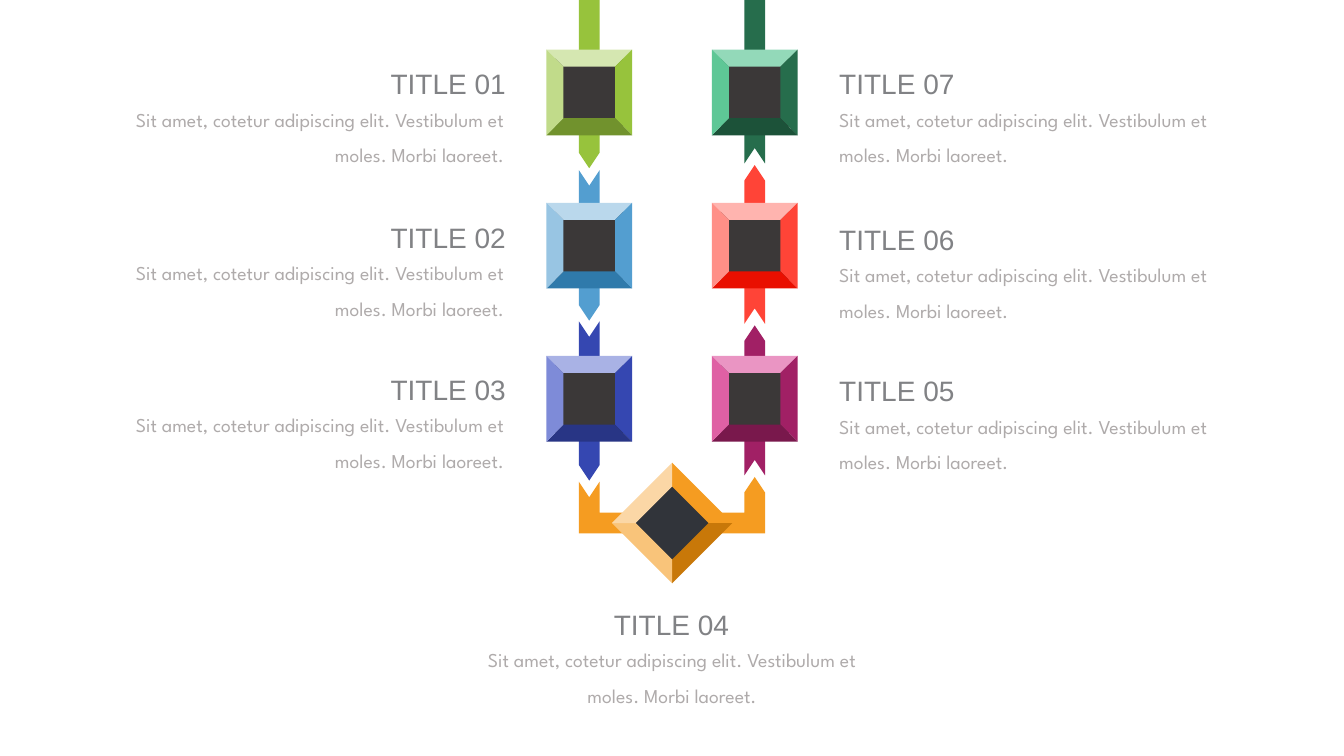
from pptx import Presentation
from pptx.dml.color import RGBColor
from pptx.enum.shapes import MSO_SHAPE
from pptx.enum.text import MSO_ANCHOR, PP_ALIGN
from pptx.util import Cm, Pt

# Lengths in centimetres
LEFT_X, RIGHT_X = 14.85, 19.02
FIRST_GEM_Y, GEM_PITCH = 2.33, 3.86
GEM_HALF, GEM_INNER, GEM_CORE = 1.08, 0.65, 0.86
STRIP_HALF, NOTCH = 0.26, 0.39
DIAMOND_X, DIAMOND_Y = 16.94, 13.18
DIAMOND_HALF, DIAMOND_INNER, DIAMOND_CORE = 1.52, 0.92, 1.22

BODY = "Sit amet, cotetur adipiscing elit. Vestibulum et moles. Morbi laoreet."
SQUARE = [(-1, -1), (1, -1), (1, 1), (-1, 1)]
DIAMOND = [(0, -1), (1, 0), (0, 1), (-1, 0)]

# Centre x, row, strip tail, strip tip, facets (top, right, bottom, left)
GEMS = [
    (LEFT_X, 0, 0, 4.24, ["D5E7B1", "97C33C", "71922D", "C1DB8A"]),
    (LEFT_X, 1, 4.29, 8.08, ["BAD8EC", "539ED0", "2F7AAB", "98C5E3"]),
    (LEFT_X, 2, 8.1, 12.11, ["A9B2E5", "3547B1", "283585", "7E8BD8"]),
    (RIGHT_X, 2, 11.98, 8.2, ["EA95C3", "A12065", "79184C", "DF60A4"]),
    (RIGHT_X, 1, 8.16, 4.16, ["FFB4AF", "FF4437", "E90F00", "FF8F87"]),
    (RIGHT_X, 0, 4.12, 0, ["93D9B9", "266D4C", "1C5239", "5EC796"]),
]
DIAMOND_FACETS = ["F59C21", "C87809", "F9C47A", "FBD7A6"]

# Alignment: title left, body left
COLUMNS = {
    PP_ALIGN.RIGHT: (4.29, 3.0),
    PP_ALIGN.CENTER: (12.57, 11.96),
    PP_ALIGN.LEFT: (20.9, 20.9),
}
CAPTIONS = [
    ("TITLE 01", PP_ALIGN.RIGHT, 1.24),
    ("TITLE 02", PP_ALIGN.RIGHT, 5.11),
    ("TITLE 03", PP_ALIGN.RIGHT, 8.94),
    ("TITLE 04", PP_ALIGN.CENTER, 14.86),
    ("TITLE 05", PP_ALIGN.LEFT, 8.97),
    ("TITLE 06", PP_ALIGN.LEFT, 5.16),
    ("TITLE 07", PP_ALIGN.LEFT, 1.24),
]


def colour(hex_value):
    return RGBColor.from_string(hex_value)


class Board:
    title_style = ("Arial", 20, "818285")
    body_style = ("League Spartan", 14, "AFABAB")

    def __init__(self, slide):
        self.slide = slide

    def paint(self, shape, fill):
        shape.shadow.inherit = False
        shape.fill.solid()
        shape.fill.fore_color.rgb = colour(fill)
        shape.line.fill.background()

    def outline(self, points, fill):
        corners = [(Cm(x), Cm(y)) for x, y in points]
        builder = self.slide.shapes.build_freeform(*corners[0], scale=1.0)
        builder.add_line_segments(corners[1:], close=True)
        self.paint(builder.convert_to_shape(), fill)

    def strip(self, x, tail, tip, fill):
        """Arrow strip with a notched tail; flat where it meets the slide edge."""
        step = NOTCH if tip > tail else -NOTCH
        notch = tail + step if tail else tail
        shoulder = tip - step if tip else tip
        left, right = x - STRIP_HALF, x + STRIP_HALF
        self.outline([(left, tail), (x, notch), (right, tail),
                      (right, shoulder), (x, tip), (left, shoulder)], fill)

    def core(self, kind, x, y, half, fill):
        shape = self.slide.shapes.add_shape(
            kind, Cm(x - half), Cm(y - half), Cm(2 * half), Cm(2 * half))
        self.paint(shape, fill)

    def bevel(self, corners, x, y, outer, inner, facets):
        """One facet between each pair of neighbouring corners."""
        following = corners[1:] + corners[:1]
        for (ax, ay), (bx, by), fill in zip(corners, following, facets):
            self.outline([(x + ax * outer, y + ay * outer),
                          (x + bx * outer, y + by * outer),
                          (x + bx * inner, y + by * inner),
                          (x + ax * inner, y + ay * inner)], fill)

    def text(self, wording, left, top, width, height, align, style):
        box = self.slide.shapes.add_textbox(
            Cm(left), Cm(top), Cm(width), Cm(height))
        frame = box.text_frame
        frame.word_wrap = True
        frame.vertical_anchor = MSO_ANCHOR.MIDDLE
        frame.text = wording
        paragraph = frame.paragraphs[0]
        paragraph.alignment = align
        paragraph.line_spacing = 1.5
        font = paragraph.runs[0].font
        font.name, size, ink = style
        font.size = Pt(size)
        font.color.rgb = colour(ink)


def main():
    deck = Presentation()
    deck.slide_width, deck.slide_height = Cm(33.87), Cm(19.05)
    board = Board(deck.slides.add_slide(deck.slide_layouts[6]))

    # Square stations on both columns
    for x, row, tail, tip, facets in GEMS:
        y = FIRST_GEM_Y + row * GEM_PITCH
        board.strip(x, tail, tip, facets[1])
        board.core(MSO_SHAPE.RECTANGLE, x, y, GEM_CORE, "3B3838")
        board.bevel(SQUARE, x, y, GEM_HALF, GEM_INNER, facets)

    # U-turn joining the columns
    outer_left, inner_left = LEFT_X - STRIP_HALF, LEFT_X + STRIP_HALF
    inner_right, outer_right = RIGHT_X - STRIP_HALF, RIGHT_X + STRIP_HALF
    turn_top, turn_bottom = DIAMOND_Y - STRIP_HALF, DIAMOND_Y + STRIP_HALF
    tail, tip = 12.14, 12.02
    board.outline([
        (outer_left, tail), (LEFT_X, tail + NOTCH), (inner_left, tail),
        (inner_left, turn_top), (inner_right, turn_top),
        (inner_right, tip + NOTCH), (RIGHT_X, tip), (outer_right, tip + NOTCH),
        (outer_right, turn_bottom), (outer_left, turn_bottom),
    ], "F59C21")

    # Diamond station
    board.core(MSO_SHAPE.DIAMOND, DIAMOND_X, DIAMOND_Y, DIAMOND_CORE, "31343A")
    board.bevel(DIAMOND, DIAMOND_X, DIAMOND_Y, DIAMOND_HALF, DIAMOND_INNER,
                DIAMOND_FACETS)

    # Captions
    for title, align, top in CAPTIONS:
        title_left, body_left = COLUMNS[align]
        board.text(BODY, body_left, top + 1.04, 9.96, 2.06, align,
                   board.body_style)
        board.text(title, title_left, top, 8.71, 1.32, align,
                   board.title_style)

    deck.save("out.pptx")


if __name__ == "__main__":
    main()
